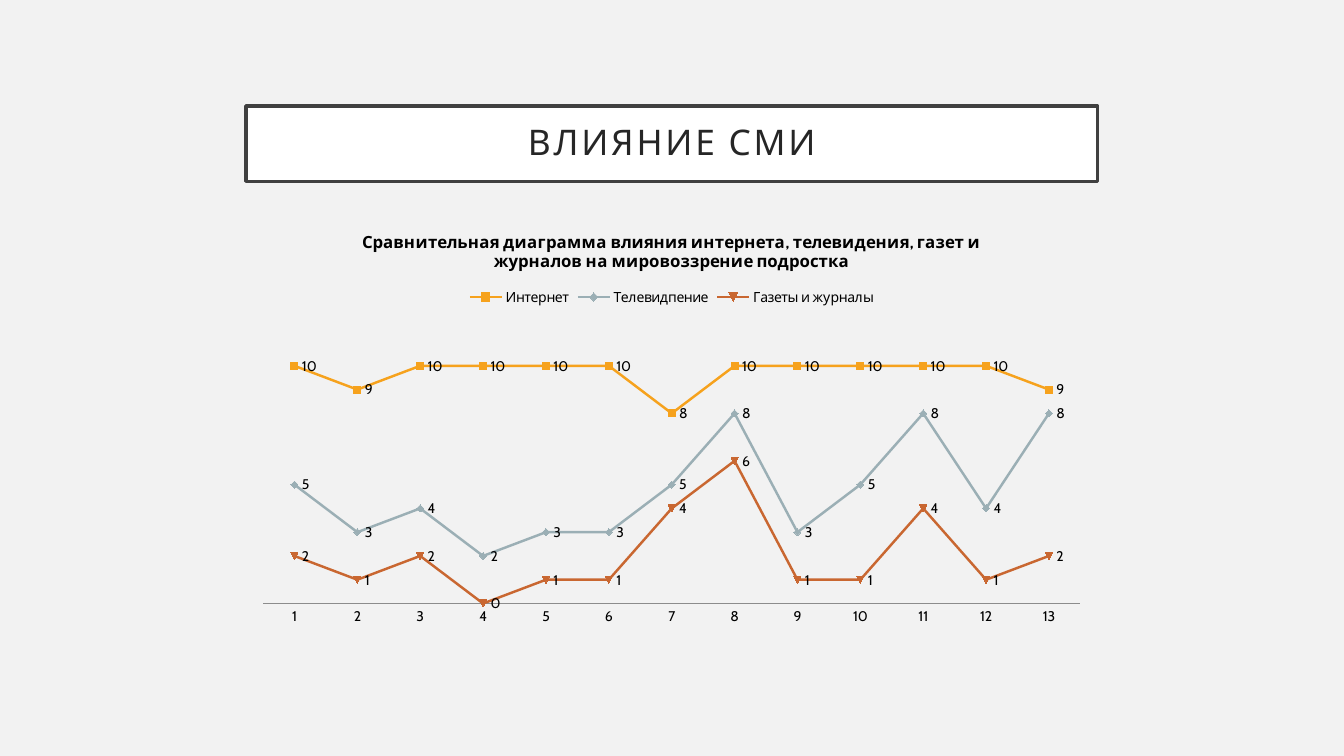
from lxml.etree import SubElement
from pptx import Presentation
from pptx.chart.data import CategoryChartData
from pptx.dml.color import RGBColor
from pptx.enum.chart import XL_CHART_TYPE, XL_LABEL_POSITION, XL_LEGEND_POSITION, XL_TICK_MARK
from pptx.enum.shapes import MSO_SHAPE
from pptx.enum.text import MSO_ANCHOR, PP_ALIGN
from pptx.oxml.ns import qn
from pptx.util import Cm, Pt

FONT = "Cabin"
LEFT, WIDTH = Cm(6.2), Cm(21.46)
HEADING = "ВЛИЯНИЕ СМИ"
CHART_TITLE = ("Сравнительная диаграмма влияния интернета, телевидения, "
               "газет и журналов на мировоззрение подростка")
INFLUENCE = [
    ("Интернет", "F6A21D", (10, 9, 10, 10, 10, 10, 8, 10, 10, 10, 10, 10, 9)),
    ("Телевидпение", "9BAFB5", (5, 3, 4, 2, 3, 3, 5, 8, 3, 5, 8, 4, 8)),
    ("Газеты и журналы", "C96731", (2, 1, 2, 0, 1, 1, 4, 6, 1, 1, 4, 1, 2)),
]


def paint(color_holder, hex_color):
    """Give a solid fill, a line's fill or a font a colour."""
    if hasattr(color_holder, "solid"):
        color_holder.solid()
        color_holder = color_holder.fore_color
    else:
        color_holder = color_holder.color
    color_holder.rgb = RGBColor.from_string(hex_color)


def style_font(font, size, color, bold=False):
    font.name = FONT
    font.size = Pt(size)
    font.bold = bold
    paint(font, color)


def add_heading(slide):
    banner = slide.shapes.add_shape(MSO_SHAPE.RECTANGLE, LEFT, Cm(2.67), WIDTH, Cm(1.9))
    banner.shadow.inherit = False
    paint(banner.fill, "FFFFFF")
    paint(banner.line.fill, "404040")
    banner.line.width = Pt(2.5)

    frame = banner.text_frame
    frame.word_wrap = True
    frame.vertical_anchor = MSO_ANCHOR.MIDDLE
    frame.margin_left = frame.margin_right = Cm(0.5)
    frame.margin_top = frame.margin_bottom = Cm(0.5)
    paragraph = frame.paragraphs[0]
    paragraph.alignment = PP_ALIGN.CENTER
    paragraph.line_spacing = 0.9
    heading = paragraph.add_run()
    heading.text = HEADING
    style_font(heading.font, 25.2, "262626")
    heading.font._element.set("spc", "200")


def place_plot(chart, **fractions):
    """Fix the inner plot area, in fractions of the chart's size."""
    plot_area = chart._chartSpace.chart.plotArea
    for old_layout in plot_area.findall(qn("c:layout")):
        plot_area.remove(old_layout)
    layout = SubElement(plot_area, qn("c:layout"))
    plot_area.insert(0, layout)
    manual = SubElement(layout, qn("c:manualLayout"))
    settings = {"layoutTarget": "inner", "xMode": "edge", "yMode": "edge", **fractions}
    for tag, value in settings.items():
        SubElement(manual, qn(f"c:{tag}")).set("val", str(value))


def style_axes(chart):
    numbers = chart.category_axis
    numbers.major_tick_mark = numbers.minor_tick_mark = XL_TICK_MARK.NONE
    numbers.has_major_gridlines = False
    paint(numbers.format.line.fill, "8C8C8C")
    numbers.format.line.width = Pt(0.75)

    scores = chart.value_axis
    scores.minimum_scale, scores.maximum_scale = 0, 12
    scores.has_major_gridlines = False
    scores.visible = False


def style_series(series, color):
    series.smooth = False
    series.marker.style = None
    paint(series.format.line.fill, color)
    series.format.line.width = Pt(1.75)
    labels = series.data_labels
    labels.show_value = True
    labels.position = XL_LABEL_POSITION.RIGHT
    style_font(labels.font, 10, "000000")


def add_influence_chart(slide):
    data = CategoryChartData()
    data.categories = [str(number) for number in range(1, 14)]
    for name, _, values in INFLUENCE:
        data.add_series(name, values)
    chart = slide.shapes.add_chart(
        XL_CHART_TYPE.LINE, LEFT, Cm(5.38), WIDTH, Cm(10.57), data).chart
    style_font(chart.font, 10, "000000")

    chart.has_title = True
    title = chart.chart_title.text_frame.paragraphs[0].add_run()
    title.text = CHART_TITLE
    style_font(title.font, 12, "000000", bold=True)
    chart.chart_title.include_in_layout = False

    chart.has_legend = True
    chart.legend.position = XL_LEGEND_POSITION.TOP
    chart.legend.include_in_layout = False
    style_font(chart.legend.font, 10, "000000")

    chart.plots[0].vary_by_categories = False
    style_axes(chart)
    for series, (_, color, _) in zip(chart.plots[0].series, INFLUENCE):
        style_series(series, color)
    place_plot(chart, x=0.02, y=0.25, w=0.96, h=0.68)


def main():
    deck = Presentation()
    deck.slide_width, deck.slide_height = Cm(33.87), Cm(19.05)
    slide = deck.slides.add_slide(deck.slide_layouts[6])
    paint(slide.background.fill, "F2F2F2")
    add_heading(slide)
    add_influence_chart(slide)
    deck.save("out.pptx")


if __name__ == "__main__":
    main()
